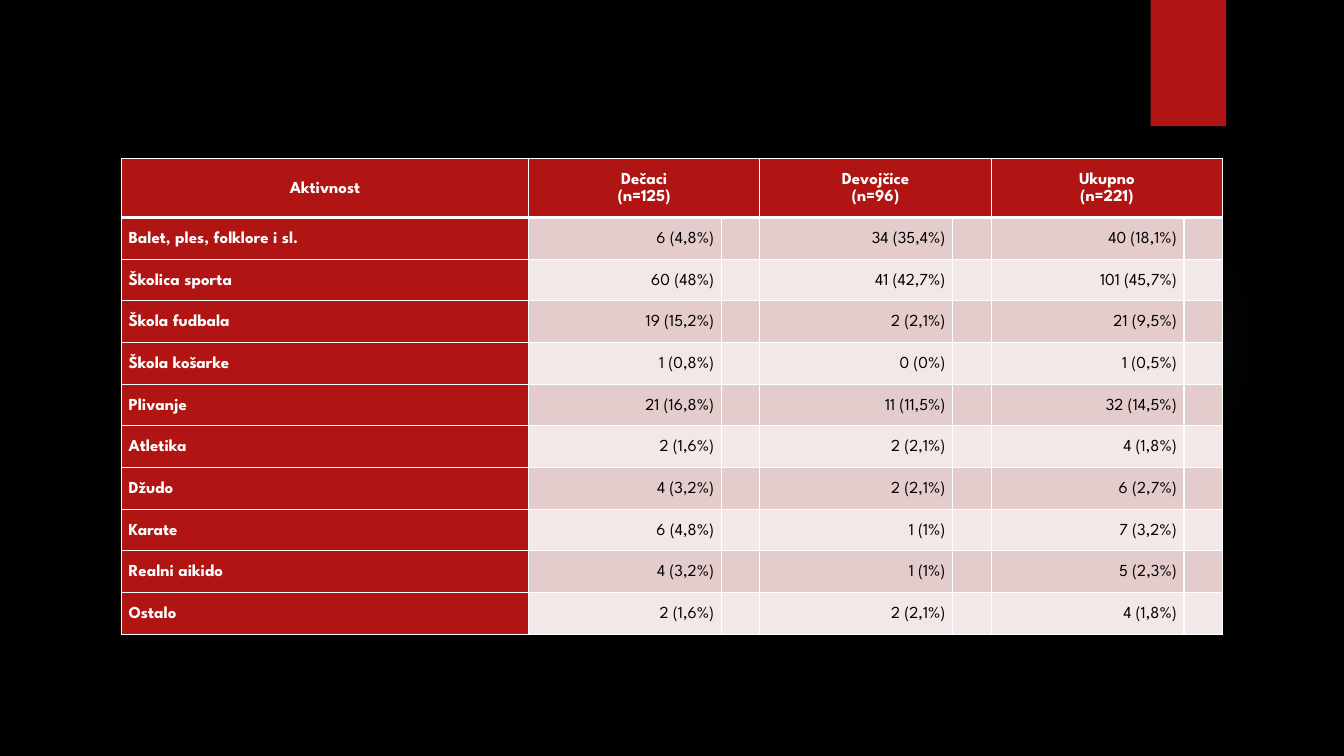
from lxml.etree import SubElement
from pptx import Presentation
from pptx.dml.color import RGBColor
from pptx.enum.shapes import MSO_SHAPE
from pptx.enum.text import MSO_ANCHOR, PP_ALIGN
from pptx.oxml import parse_xml
from pptx.oxml.ns import nsdecls, qn
from pptx.util import Cm, Pt

FONT = "League Spartan"
RED, WHITE, BLACK = "B01513", "FFFFFF", "000000"
BANDS = ["E4CCCC", "F2E8E7"]
GLOW, GLOW_STOPS = "50B9C1", [(0, 7), (36, 6), (69, 0)]
COLUMN_WIDTHS = [10.26] + [4.86, 0.97] * 3
HEADER_HEIGHT, ROW_HEIGHT = 1.49, 1.05

HEADERS = ["Aktivnost", "Dečaci\n(n=125)", "Devojčice\n(n=96)", "Ukupno\n(n=221)"]
ACTIVITIES = [
    ("Balet, ples, folklore i sl.", "6 (4,8%)", "34 (35,4%)", "40 (18,1%)"),
    ("Školica sporta", "60 (48%)", "41 (42,7%)", "101 (45,7%)"),
    ("Škola fudbala", "19 (15,2%)", "2 (2,1%)", "21 (9,5%)"),
    ("Škola košarke", "1 (0,8%)", "0 (0%)", "1 (0,5%)"),
    ("Plivanje", "21 (16,8%)", "11 (11,5%)", "32 (14,5%)"),
    ("Atletika", "2 (1,6%)", "2 (2,1%)", "4 (1,8%)"),
    ("Džudo", "4 (3,2%)", "2 (2,1%)", "6 (2,7%)"),
    ("Karate", "6 (4,8%)", "1 (1%)", "7 (3,2%)"),
    ("Realni aikido", "4 (3,2%)", "1 (1%)", "5 (2,3%)"),
    ("Ostalo", "2 (1,6%)", "2 (2,1%)", "4 (1,8%)"),
]


def paint(fill, color):
    fill.solid()
    fill.fore_color.rgb = RGBColor.from_string(color)


def add_plain_shape(page, kind, left, top, width, height):
    shape = page.shapes.add_shape(kind, Cm(left), Cm(top), Cm(width), Cm(height))
    shape.shadow.inherit = False
    shape.line.fill.background()
    return shape


def add_glow(page):
    glow = add_plain_shape(page, MSO_SHAPE.OVAL, 23.9, 4.65, 7.82, 7.82)
    glow.fill.background()
    stops = "".join(
        f'<a:gs pos="{position * 1000}"><a:srgbClr val="{GLOW}">'
        f'<a:alpha val="{opacity * 1000}"/></a:srgbClr></a:gs>'
        for position, opacity in GLOW_STOPS
    )
    gradient = parse_xml(
        f'<a:gradFill {nsdecls("a")}><a:gsLst>{stops}</a:gsLst><a:path path="circle">'
        '<a:fillToRect l="50000" t="50000" r="50000" b="50000"/></a:path></a:gradFill>'
    )
    properties = glow.element.spPr
    properties.replace(properties.find(qn("a:noFill")), gradient)


def set_borders(cell, top=1, bottom=1):
    properties = cell._tc.get_or_add_tcPr()
    for side, width in (("L", 1), ("R", 1), ("T", top), ("B", bottom)):
        line = SubElement(properties, qn(f"a:ln{side}"), w=str(Pt(width)))
        fill = SubElement(line, qn("a:solidFill"))
        SubElement(fill, qn("a:srgbClr"), val=WHITE)


def format_cell(cell, color, top=1, bottom=1):
    set_borders(cell, top, bottom)
    paint(cell.fill, color)
    cell.vertical_anchor = MSO_ANCHOR.MIDDLE
    cell.margin_left = cell.margin_right = Cm(0.18)
    cell.margin_top = cell.margin_bottom = 0


def write_cell(cell, text, alignment, color, bold):
    cell.text = text
    for paragraph in cell.text_frame.paragraphs:
        paragraph.alignment = alignment
        paragraph.line_spacing = 1.15
        font = paragraph.font
        font.name, font.size, font.bold = FONT, Pt(12), bold
        font.color.rgb = RGBColor.from_string(color)


def fill_header(table):
    for cell in table.rows[0].cells:
        format_cell(cell, RED, bottom=3)
    for index, header in enumerate(HEADERS):
        column = max(0, 2 * index - 1)
        cell = table.cell(0, column)
        if index:
            cell.merge(table.cell(0, column + 1))
        write_cell(cell, header, PP_ALIGN.CENTER, WHITE, True)


def fill_activity(table, row, activity):
    for column, cell in enumerate(table.rows[row].cells):
        color = BANDS[(row - 1) % 2] if column else RED
        format_cell(cell, color, top=3 if row == 1 else 1)
    name, *counts = activity
    write_cell(table.cell(row, 0), name, PP_ALIGN.LEFT, WHITE, True)
    for index, count in enumerate(counts):
        write_cell(table.cell(row, 2 * index + 1), count, PP_ALIGN.RIGHT, BLACK, False)


def add_activity_table(page):
    height = HEADER_HEIGHT + ROW_HEIGHT * len(ACTIVITIES)
    table = page.shapes.add_table(
        len(ACTIVITIES) + 1, len(COLUMN_WIDTHS),
        Cm(3.06), Cm(3.99), Cm(sum(COLUMN_WIDTHS)), Cm(height),
    ).table
    table.horz_banding = False
    for column, width in zip(table.columns, COLUMN_WIDTHS):
        column.width = Cm(width)
    for row in table.rows:
        row.height = Cm(ROW_HEIGHT)
    table.rows[0].height = Cm(HEADER_HEIGHT)
    fill_header(table)
    for row, activity in enumerate(ACTIVITIES, start=1):
        fill_activity(table, row, activity)


def main():
    deck = Presentation()
    deck.slide_width, deck.slide_height = Cm(33.87), Cm(19.05)
    page = deck.slides.add_slide(deck.slide_layouts[6])
    paint(page.background.fill, BLACK)
    add_glow(page)
    ribbon = add_plain_shape(page, MSO_SHAPE.RECTANGLE, 29, 0, 1.9, 3.18)
    paint(ribbon.fill, RED)
    add_activity_table(page)
    deck.save("out.pptx")


if __name__ == "__main__":
    main()
